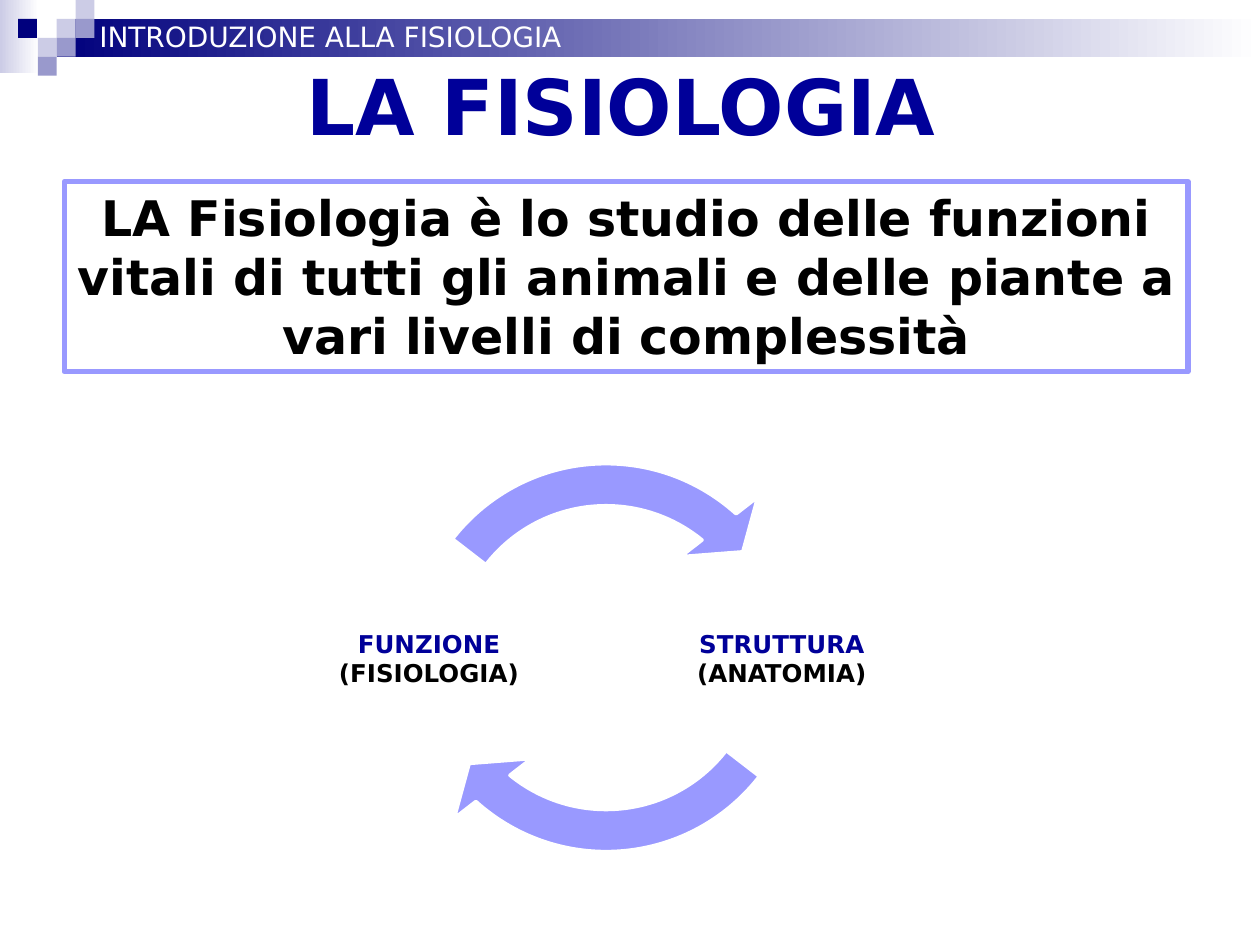
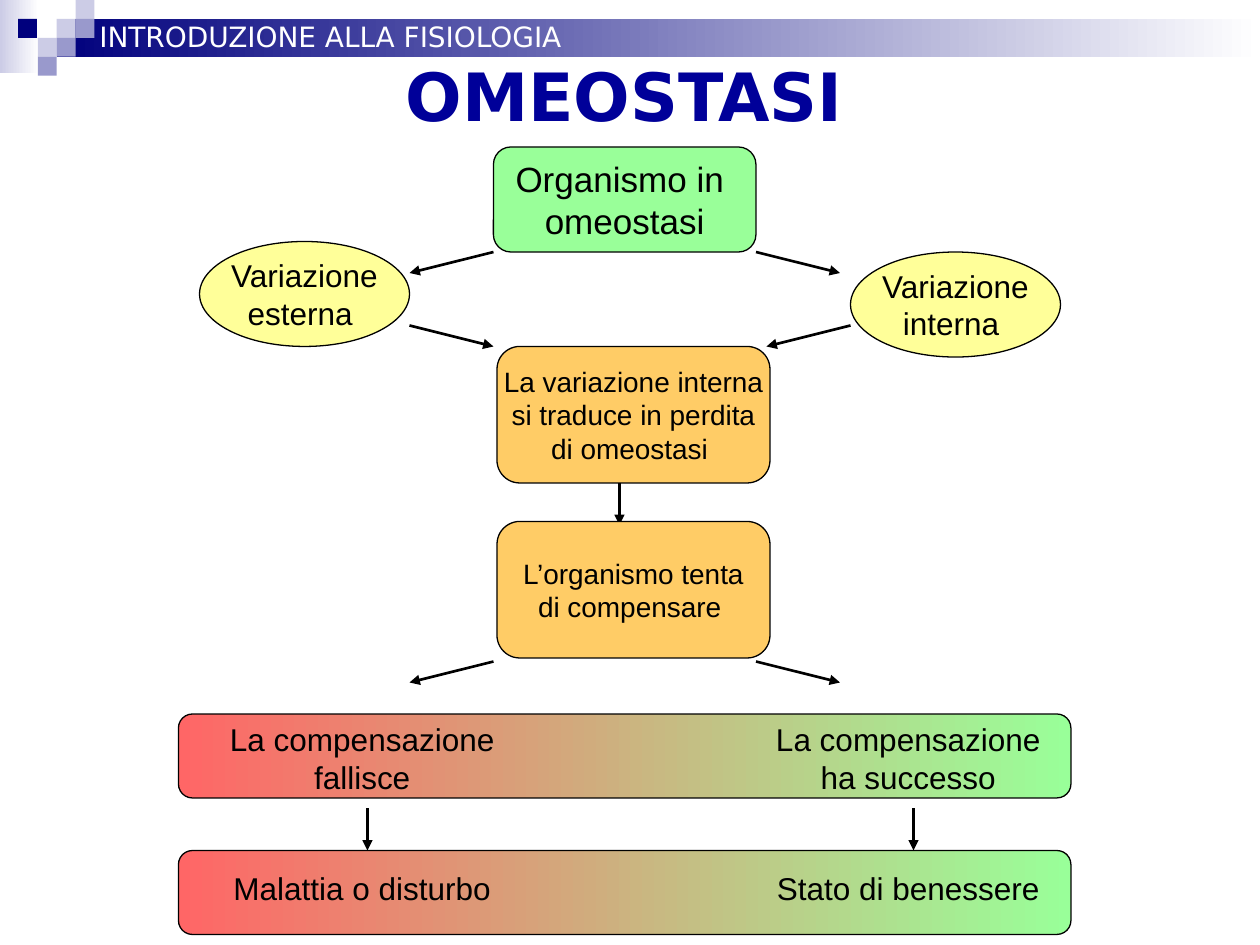
from lxml import etree
from pptx import Presentation
from pptx.dml.color import RGBColor
from pptx.enum.shapes import MSO_CONNECTOR, MSO_SHAPE
from pptx.enum.text import MSO_ANCHOR, MSO_AUTO_SIZE, PP_ALIGN
from pptx.oxml.ns import qn
from pptx.util import Pt

RECT, ROUND = MSO_SHAPE.RECTANGLE, MSO_SHAPE.ROUNDED_RECTANGLE
ELLIPSE, CYCLE_ARROW = MSO_SHAPE.OVAL, MSO_SHAPE.CIRCULAR_ARROW
STRAIGHT = MSO_CONNECTOR.STRAIGHT
TOP, MIDDLE = MSO_ANCHOR.TOP, MSO_ANCHOR.MIDDLE
LEFT, CENTER = PP_ALIGN.LEFT, PP_ALIGN.CENTER
NO_AUTOFIT = MSO_AUTO_SIZE.NONE
TITLE_ONLY = 5

HEAD_FONT, FLOW_FONT = "DejaVu Sans", "Arial"
C = {
    "white": "FFFFFF", "black": "000000", "title": "000099",
    "navy": "00007D", "pale": "CCCCE6", "mid": "9999CC",
    "violet": "9999FF", "green": "99FF99", "yellow": "FFFF99",
    "orange": "FFCC66", "red": "FF6666",
}


def rgb(name):
    return RGBColor.from_string(C[name])


def write(sp, lines, size, font, colors=("black",), bold=False,
          align=CENTER, anchor=TOP, wrap=True, inset=None):
    """Write one paragraph per line; the last colour serves all further lines."""
    tf = sp.text_frame
    tf.auto_size, tf.word_wrap, tf.vertical_anchor = NO_AUTOFIT, wrap, anchor
    if inset is not None:
        tf.margin_left = tf.margin_right = Pt(inset)
        tf.margin_top = tf.margin_bottom = Pt(inset)
    for i, line in enumerate(lines):
        p = tf.paragraphs[0] if i == 0 else tf.add_paragraph()
        p.text, p.alignment = line, align
        p.font.size, p.font.name, p.font.bold = Pt(size), font, bold
        p.font.color.rgb = rgb(colors[min(i, len(colors) - 1)])


def add_shape(s, kind, box, fill, line=None, width=0.75):
    """Add a preset shape; a pair of fill colours gives a left-right gradient."""
    sp = s.shapes.add_shape(kind, *map(Pt, box))
    sp.shadow.inherit = False
    if isinstance(fill, tuple):
        sp.fill.gradient()
        sp.fill.gradient_angle = 0
        for stop, color, position in zip(sp.fill.gradient_stops, fill, (0, 1)):
            stop.color.rgb, stop.position = rgb(color), position
    else:
        sp.fill.solid()
        sp.fill.fore_color.rgb = rgb(fill)
    if line:
        sp.line.color.rgb, sp.line.width = rgb(line), Pt(width)
    else:
        sp.line.fill.background()
    return sp


def add_text(s, box, lines, size, font, **style):
    write(s.shapes.add_textbox(*map(Pt, box)), lines, size, font, **style)


def add_arrow(s, x1, y1, x2, y2):
    cn = s.shapes.add_connector(STRAIGHT, Pt(x1), Pt(y1), Pt(x2), Pt(y2))
    cn.line.color.rgb, cn.line.width = rgb("black"), Pt(1.5)
    etree.SubElement(cn.line._get_or_add_ln(), qn("a:tailEnd"), type="triangle")
    etree.SubElement(cn._element.spPr, qn("a:effectLst"))


def add_header(s):
    add_shape(s, RECT, (0, 0, 22.3, 41.8), ("pale", "white"))
    add_shape(s, RECT, (32.4, 10.8, 687.6, 21.6), ("navy", "white"))
    # Mosaic of squares: left edge, row, colour
    cell = 10.8
    for x, row, color in ((32.4, 1, "pale"), (43.2, 0, "pale"), (43.2, 1, "mid"),
                          (21.6, 2, "pale"), (10.3, 1, "navy"),
                          (32.4, 2, "mid"), (21.6, 3, "mid")):
        add_shape(s, RECT, (x, row * cell, cell, cell), color)
    add_text(s, (49.7, 7.9, 291.6, 26.6), ["INTRODUZIONE ALLA FISIOLOGIA"],
             16, HEAD_FONT, colors=("white",), align=LEFT, wrap=False)


def new_slide(prs, title, box, size):
    s = prs.slides.add_slide(prs.slide_layouts[TITLE_ONLY])
    add_header(s)
    sp = s.shapes.title
    sp.left, sp.top, sp.width, sp.height = map(Pt, box)
    write(sp, [title], size, HEAD_FONT, colors=("title",), bold=True, anchor=MIDDLE)
    return s


def add_node(s, kind, box, fill, lines, size):
    sp = add_shape(s, kind, box, fill, "black")
    write(sp, lines, size, FLOW_FONT, anchor=MIDDLE, wrap=False)


def build_physiology(prs):
    s = new_slide(prs, "LA FISIOLOGIA", (31, 5.8, 648, 108), 44)

    # Definition
    sp = add_shape(s, RECT, (36.7, 103.7, 642.2, 108.7), "white", "violet", 3)
    write(sp, ["LA Fisiologia è lo studio delle funzioni vitali di tutti gli "
               "animali e delle piante a vari livelli di complessità"],
          28, HEAD_FONT, bold=True)

    # Cycle of structure and function: label left edge, words, arrow end and start
    for x, lines, end, start in (
            (385.2, ["STRUTTURA", "(ANATOMIA)"], 78.52, 22.63),
            (183.6, ["FUNZIONE", "(FISIOLOGIA)"], 186.52, 130.63)):
        add_text(s, (x, 314.6, 123.1, 123.1), lines, 14, HEAD_FONT,
                 colors=("title", "black"), bold=True, anchor=MIDDLE, inset=1.4)
        sp = add_shape(s, CYCLE_ARROW, (219.6, 249.1, 253.4, 253.4),
                       "violet", "white", 2)
        for i, value in enumerate((0.095, 6.85, end, start, 0.11)):
            sp.adjustments[i] = value


def build_homeostasis(prs):
    s = new_slide(prs, "OMEOSTASI", (12.2, 0, 689, 108), 38)

    # Arrows
    for ends in ((282, 144, 234, 156), (432, 144, 480, 156),
                 (234, 186, 282, 198), (486, 186, 438, 198),
                 (354, 276, 354, 300),
                 (282, 378, 234, 390), (432, 378, 480, 390),
                 (210, 462, 210, 486), (522, 462, 522, 486)):
        add_arrow(s, *ends)

    # Steps
    add_node(s, ROUND, (282, 84, 150, 60), "green",
             ["Organismo in ", "omeostasi"], 20)
    for x, y, word in ((114, 138, "esterna "), (486, 144, "interna ")):
        add_node(s, ELLIPSE, (x, y, 120, 60), "yellow", ["Variazione", word], 18)
    for y, lines in (
            (198, ["La variazione interna", "si traduce in perdita", "di omeostasi "]),
            (298, ["L’organismo tenta", "di compensare "])):
        add_node(s, ROUND, (284, y, 156, 78), "orange", lines, 16)

    # Outcomes: failure on the left, success on the right
    for bar_y, text_y, height, texts in (
            (408, 408, 50.4, ("La compensazione fallisce",
                              "La compensazione ha successo")),
            (486, 493.2, 28.8, ("Malattia o disturbo", "Stato di benessere"))):
        add_shape(s, ROUND, (102, bar_y, 510, 48), ("red", "green"), "black")
        for x, text in zip((120, 432), texts):
            add_text(s, (x, text_y, 174, height), [text], 18, FLOW_FONT)


def main():
    prs = Presentation()
    prs.slide_width, prs.slide_height = Pt(720), Pt(540)
    build_physiology(prs)
    build_homeostasis(prs)
    prs.save("out.pptx")


if __name__ == "__main__":
    main()
